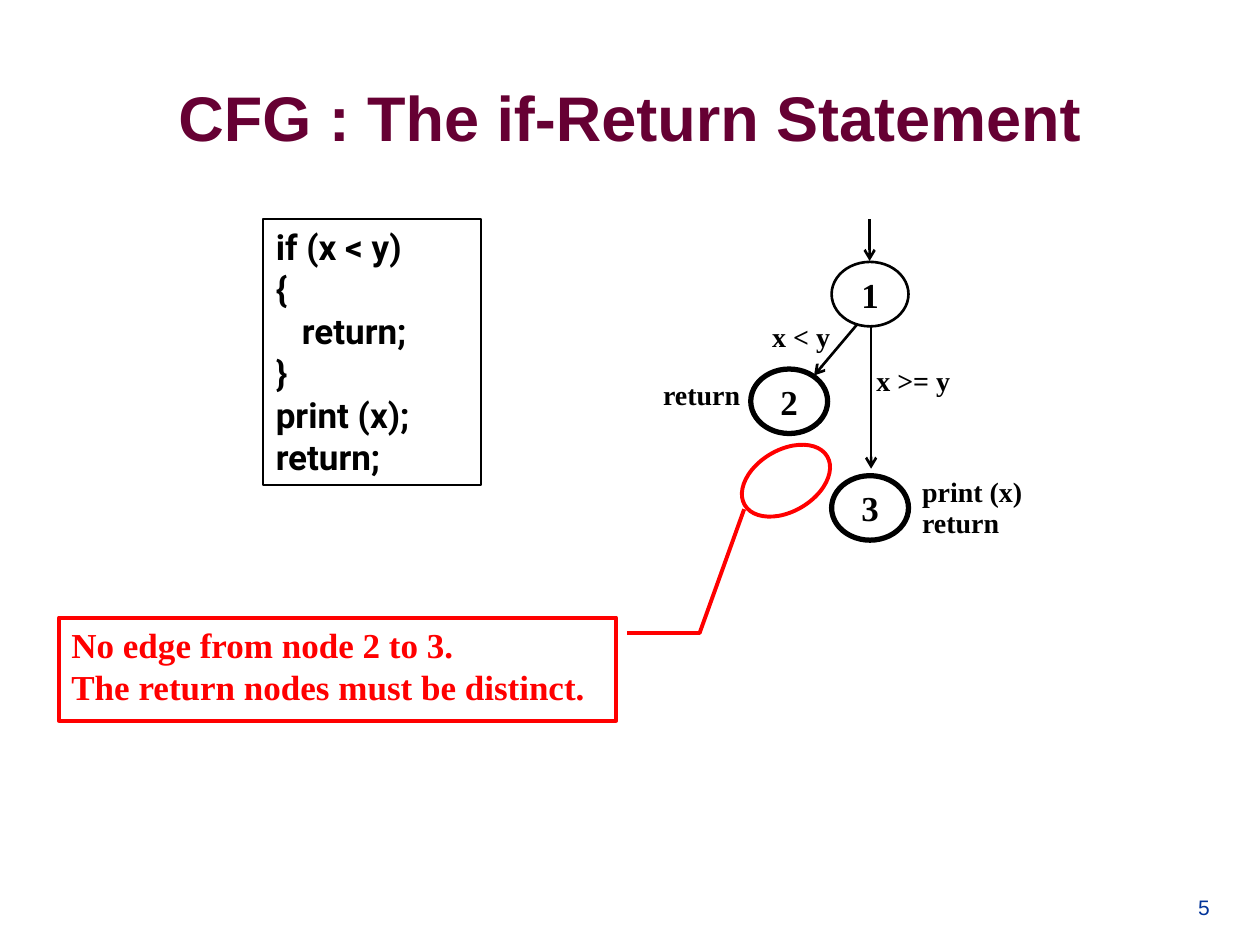
from lxml.etree import SubElement
from pptx import Presentation
from pptx.dml.color import RGBColor
from pptx.enum.shapes import MSO_CONNECTOR, MSO_SHAPE
from pptx.enum.text import MSO_ANCHOR, PP_ALIGN
from pptx.oxml.ns import qn
from pptx.util import Cm, Pt

BLACK = RGBColor(0x00, 0x00, 0x00)
RED = RGBColor(0xFF, 0x00, 0x00)
MAROON = RGBColor(0x66, 0x00, 0x33)
NAVY = RGBColor(0x00, 0x33, 0x99)

NODE_WIDTH, NODE_HEIGHT = 1.55, 1.3
CODE = ["if (x < y)", "{", "   return;", "}", "print (x);", "return;"]


def write(shape, lines, font="Times New Roman", size=20, color=BLACK, bold=True,
          align=PP_ALIGN.LEFT, anchor=MSO_ANCHOR.TOP, spacing=None, gap=0):
    frame = shape.text_frame
    frame.word_wrap = True
    frame.vertical_anchor = anchor
    for index, line in enumerate(lines):
        paragraph = frame.add_paragraph() if index else frame.paragraphs[0]
        paragraph.text = line
        paragraph.alignment = align
        if spacing:
            paragraph.line_spacing = spacing
        if index and gap:
            paragraph.space_before = Pt(gap)
        paragraph.font.name = font
        paragraph.font.size = Pt(size)
        paragraph.font.bold = bold
        paragraph.font.color.rgb = color


def add_text(slide, left, top, width, height, lines, **text_format):
    box = slide.shapes.add_textbox(Cm(left), Cm(top), Cm(width), Cm(height))
    write(box, lines, **text_format)


def add_outline(slide, preset, left, top, width, height, color=BLACK, weight=1):
    """Add an unfilled preset shape."""
    outline = slide.shapes.add_shape(preset, Cm(left), Cm(top), Cm(width), Cm(height))
    outline.shadow.inherit = False
    outline.fill.background()
    outline.line.color.rgb = color
    outline.line.width = Pt(weight)
    return outline


def add_node(slide, number, center_x, center_y, weight):
    node = add_outline(slide, MSO_SHAPE.OVAL, center_x - NODE_WIDTH / 2,
                       center_y - NODE_HEIGHT / 2, NODE_WIDTH, NODE_HEIGHT, weight=weight)
    write(node, [number], align=PP_ALIGN.CENTER, anchor=MSO_ANCHOR.MIDDLE)
    frame = node.text_frame
    frame.margin_left = frame.margin_right = frame.margin_top = frame.margin_bottom = 0


def add_arrow(slide, x1, y1, x2, y2):
    arrow = slide.shapes.add_connector(MSO_CONNECTOR.STRAIGHT, Cm(x1), Cm(y1), Cm(x2), Cm(y2))
    arrow.line.color.rgb = BLACK
    arrow.line.width = Pt(1.5)
    SubElement(arrow.line._get_or_add_ln(), qn("a:tailEnd"), type="arrow")
    SubElement(arrow._element.spPr, qn("a:effectLst"))


def add_graph(slide):
    add_node(slide, "1", 17.54, 5.93, weight=1.5)
    add_node(slide, "2", 15.91, 8.09, weight=3)
    add_node(slide, "3", 17.54, 10.24, weight=3)

    add_arrow(slide, 17.53, 4.42, 17.53, 5.26)
    add_arrow(slide, 17.27, 6.55, 16.41, 7.57)
    add_arrow(slide, 17.56, 6.55, 17.56, 9.45)

    condition = {"size": 16, "align": PP_ALIGN.CENTER}
    add_text(slide, 15.11, 6.32, 2.08, 0.94, ["x < y"], **condition)
    add_text(slide, 17.37, 7.21, 2.08, 0.94, ["x >= y"], **condition)

    statement = {"size": 16, "spacing": 0.5, "gap": 8.5}
    add_text(slide, 12.55, 7.77, 2.62, 0.66, ["return"], align=PP_ALIGN.RIGHT, **statement)
    add_text(slide, 18.34, 9.73, 2.62, 1.32, ["print (x)", "return"], **statement)


def add_missing_edge_note(slide):
    note = add_outline(slide, MSO_SHAPE.LINE_CALLOUT_2, 1.19, 12.45, 11.23, 2.08,
                       color=RED, weight=2.25)
    leader = [0.15, 1.02, 0.15, 1.15, -1.05, 1.23]
    for index, value in enumerate(leader):
        note.adjustments[index] = value
    write(note, ["No edge from node 2 to 3.", "The return nodes must be distinct."], color=RED)

    missing_edge = add_outline(slide, MSO_SHAPE.OVAL, 14.88, 9.07, 1.93, 1.24,
                               color=RED, weight=2.25)
    missing_edge.rotation = 329.5


def main():
    presentation = Presentation()
    presentation.slide_width, presentation.slide_height = Cm(25.4), Cm(19.05)
    slide = presentation.slides.add_slide(presentation.slide_layouts[6])

    add_text(slide, 1.27, 0.76, 22.86, 3.18, ["CFG : The if-Return Statement"], font="Arial",
             size=36, color=MAROON, align=PP_ALIGN.CENTER, anchor=MSO_ANCHOR.MIDDLE)
    add_text(slide, 22.89, 17.35, 1.75, 1.32, ["5"], font="Arial", size=12, color=NAVY,
             bold=False, align=PP_ALIGN.RIGHT, anchor=MSO_ANCHOR.BOTTOM)
    code_box = add_outline(slide, MSO_SHAPE.RECTANGLE, 5.31, 4.42, 4.39, 5.36)
    write(code_box, CODE, font="Roboto")
    add_graph(slide)
    add_missing_edge_note(slide)
    presentation.save("out.pptx")


if __name__ == "__main__":
    main()
